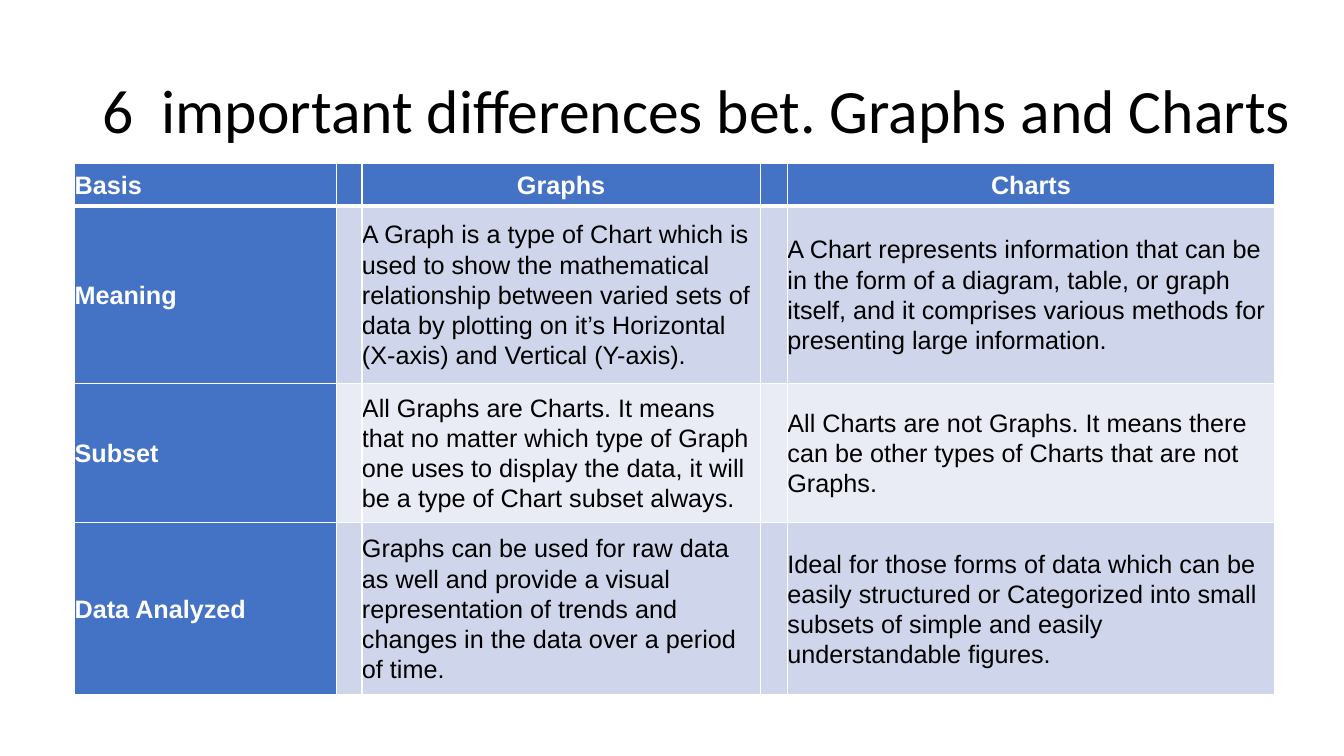
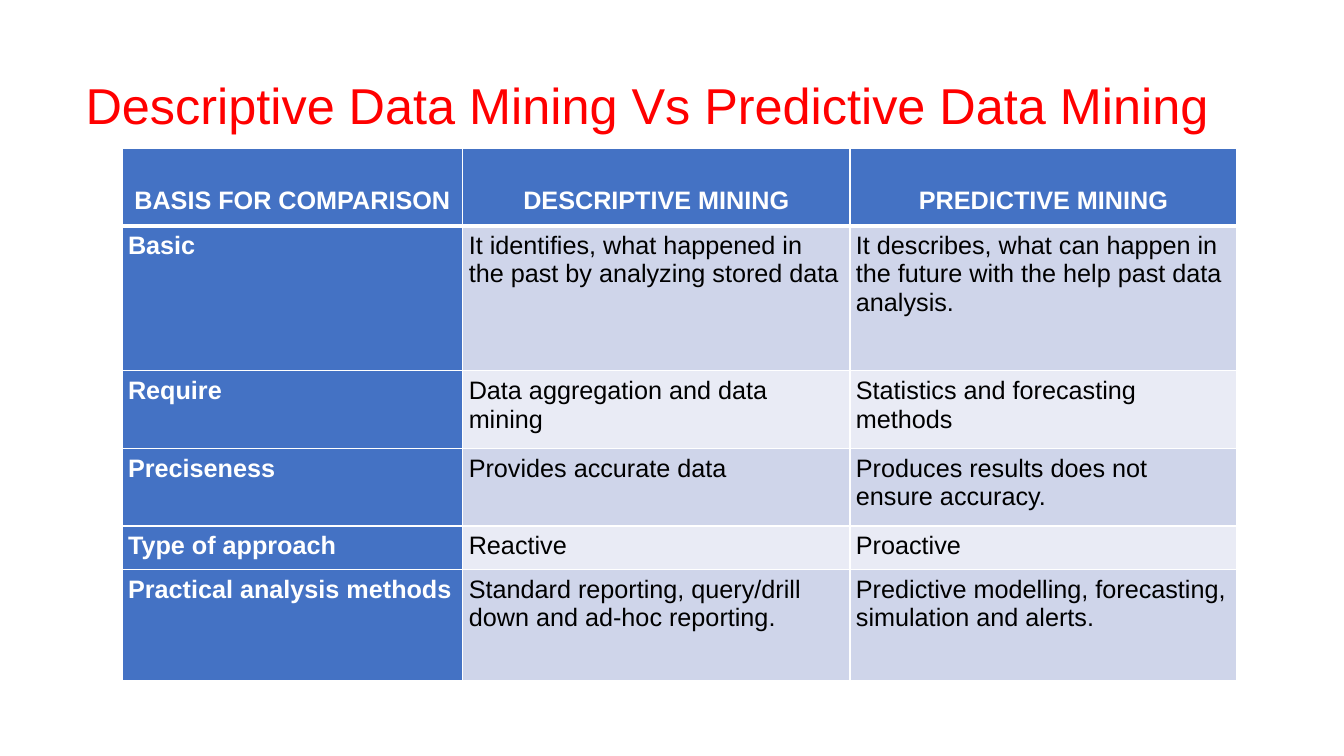
"""Build two slides, each comparing two subjects in a table."""
from lxml.etree import SubElement
from pptx import Presentation
from pptx.dml.color import RGBColor
from pptx.enum.text import MSO_ANCHOR, PP_ALIGN
from pptx.oxml.ns import qn
from pptx.util import Emu, Pt

PX = 9144
WHITE = RGBColor(0xFF, 0xFF, 0xFF)
BLACK = RGBColor(0, 0, 0)
RED = RGBColor(0xFF, 0, 0)
BLUE = RGBColor(0x44, 0x72, 0xC4)
BANDS = (RGBColor(0xCF, 0xD5, 0xEA), RGBColor(0xE9, 0xEB, 0xF5))

GRAPH_ROWS = [
    ("Basis", "", "Graphs", "", "Charts"),
    ("Meaning", "",
     "A Graph is a type of Chart which is used to show the mathematical relationship "
     "between varied sets of data by plotting on it’s Horizontal (X-axis) and Vertical (Y-axis).", "",
     "A Chart represents information that can be in the form of a diagram, table, or graph itself, "
     "and it comprises various methods for presenting large information."),
    ("Subset", "",
     "All Graphs are Charts. It means that no matter which type of Graph one uses to display the data, "
     "it will be a type of Chart subset always.", "",
     "All Charts are not Graphs. It means there can be other types of Charts that are not Graphs."),
    ("Data Analyzed", "",
     "Graphs can be used for raw data as well and provide a visual representation of trends "
     "and changes in the data over a period of time.", "",
     "Ideal for those forms of data which can be easily structured or Categorized into small subsets "
     "of simple and easily understandable figures."),
]
MINING_ROWS = [
    ("BASIS FOR COMPARISON", "DESCRIPTIVE MINING", "PREDICTIVE MINING"),
    ("Basic", "It identifies, what happened in the past by analyzing stored data",
     "It describes, what can happen in the future with the help past data analysis."),
    ("Require", "Data aggregation and data mining", "Statistics and forecasting methods"),
    ("Preciseness", "Provides accurate data", "Produces results does not ensure accuracy."),
    ("Type of approach", "Reactive", "Proactive"),
    ("Practical analysis methods", "Standard reporting, query/drill down and ad-hoc reporting.",
     "Predictive modelling, forecasting, simulation and alerts."),
]
SLIDES = [
    dict(title="6  important differences bet. Graphs and Charts", title_box=(92, 40, 1200, 145),
         title_font=dict(size=44, font="Calibri", color=BLACK),
         rows=GRAPH_ROWS, at=(74, 162), widths=(260, 25, 395, 27, 483), heights=(41, 176, 134, 161),
         margins=(0, 5), anchor=MSO_ANCHOR.MIDDLE, centred_from=1,
         head=dict(spacing=1.07, after=8), body=dict(spacing=1.07, after=8)),
    dict(title="Descriptive Data Mining Vs Predictive Data Mining", title_box=(75, 71, 1192, 73),
         title_font=dict(size=36, color=RED),
         rows=MINING_ROWS, at=(121, 147), widths=(338, 384, 384), heights=(77, 144, 77, 77, 43, 110),
         margins=(6, 6), anchor=MSO_ANCHOR.TOP, centred_from=0,
         head=dict(spacing=2.0, after=12), body={}),
]


def px(*values):
    return [Emu(v * PX) for v in values]


def write(tf, text, size=18, font="Arial", color=BLACK, bold=False, align=PP_ALIGN.LEFT,
          spacing=1.0, after=0):
    tf.word_wrap = True
    p = tf.paragraphs[0]
    p.alignment, p.line_spacing, p.space_after = align, spacing, Pt(after)
    r = p.add_run()
    r.text = text
    r.font.size, r.font.name, r.font.bold = Pt(size), font, bold
    r.font.color.rgb = color


def add_borders(cell, **widths):
    for side, width in widths.items():
        line = SubElement(cell._tc.get_or_add_tcPr(), qn(f"a:ln{side}"), w=str(Pt(width)))
        SubElement(SubElement(line, qn("a:solidFill")), qn("a:srgbClr"), val=str(WHITE))


def add_title(s, text, box, font):
    tf = s.shapes.add_textbox(*px(*box)).text_frame
    tf.vertical_anchor = MSO_ANCHOR.MIDDLE
    write(tf, text, spacing=0.9, **font)


def add_table(s, rows, at, widths, heights, margins, anchor, centred_from, head, body):
    frame = s.shapes.add_table(len(rows), len(widths), *px(*at, sum(widths), sum(heights)))
    table = frame.table
    for column, width in zip(table.columns, px(*widths)):
        column.width = width
    for row, height in zip(table.rows, px(*heights)):
        row.height = height
    side, edge = px(*margins)
    for i, texts in enumerate(rows):
        for j, text in enumerate(texts):
            cell = table.cell(i, j)
            label = i == 0 or j == 0
            add_borders(cell, L=1, R=1, T=3 if i == 1 else 1, B=3 if i == 0 else 1)
            cell.fill.solid()
            cell.fill.fore_color.rgb = BLUE if label and (i == 0 or text) else BANDS[(i - 1) % 2]
            if not text:
                continue
            cell.margin_left = cell.margin_right = side
            cell.margin_top = cell.margin_bottom = edge
            cell.vertical_anchor = MSO_ANCHOR.MIDDLE if i == 0 else anchor
            centred = i == 0 and j >= centred_from
            write(cell.text_frame, text, color=WHITE if label else BLACK, bold=label,
                  align=PP_ALIGN.CENTER if centred else PP_ALIGN.LEFT, **(body if i else head))


def main():
    prs = Presentation()
    prs.slide_width, prs.slide_height = px(1333, 750)
    for content in SLIDES:
        s = prs.slides.add_slide(prs.slide_layouts[6])
        table = dict(content)
        add_title(s, table.pop("title"), table.pop("title_box"), table.pop("title_font"))
        add_table(s, **table)
    prs.save("out.pptx")


if __name__ == "__main__":
    main()
